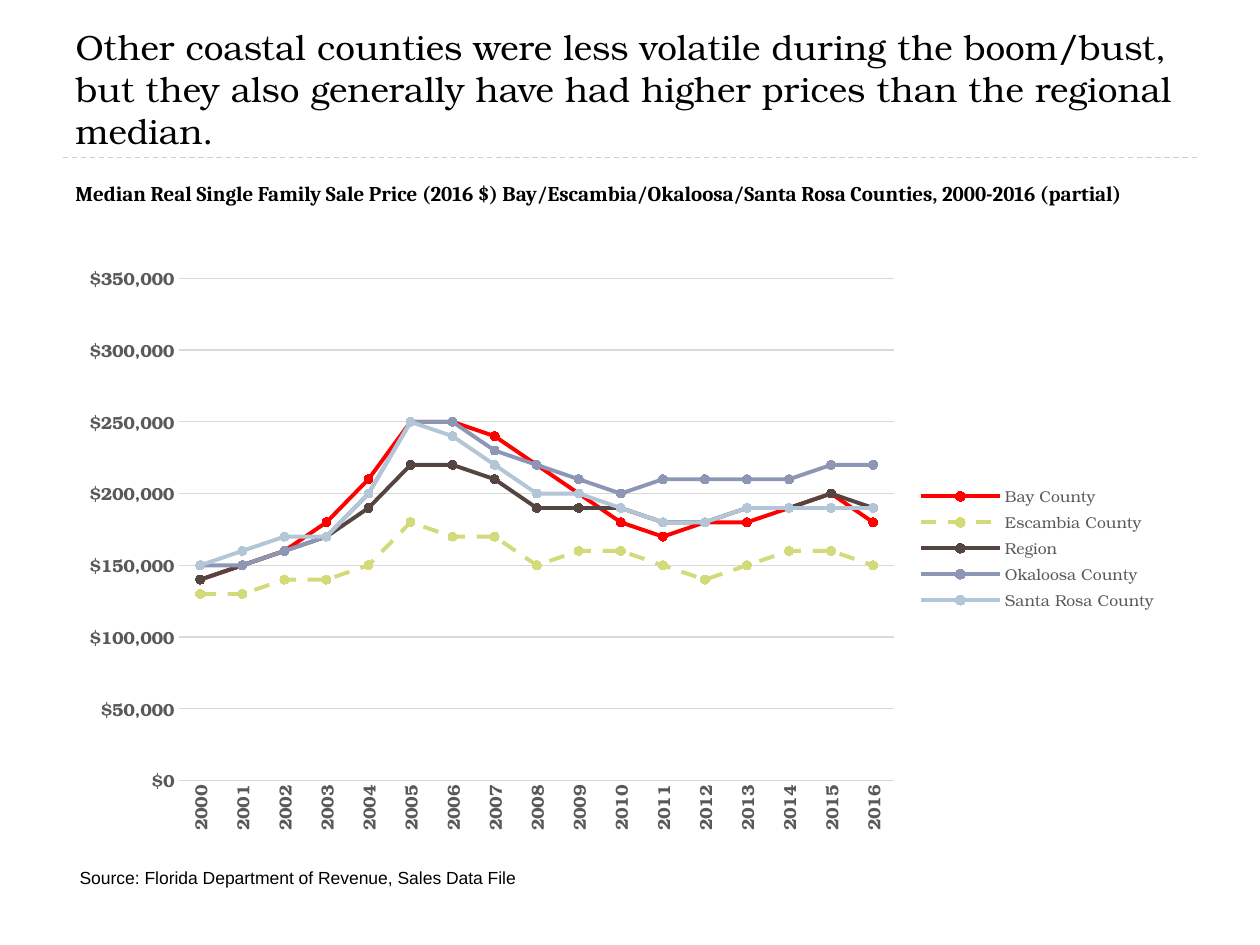
from dataclasses import dataclass

from lxml.etree import SubElement
from pptx import Presentation
from pptx.chart.data import CategoryChartData
from pptx.dml.color import RGBColor
from pptx.enum.chart import (XL_CHART_TYPE, XL_LEGEND_POSITION as LegendPos,
                             XL_MARKER_STYLE as Marker, XL_TICK_MARK as Tick)
from pptx.enum.dml import MSO_LINE as Dash
from pptx.enum.shapes import MSO_CONNECTOR
from pptx.enum.text import MSO_ANCHOR, MSO_AUTO_SIZE, PP_ALIGN
from pptx.oxml import parse_xml
from pptx.oxml.ns import nsdecls, qn
from pptx.util import Pt


@dataclass(frozen=True)
class Theme:
    serif: str = "TeX Gyre Bonum"
    heading: str = "Cambria"
    sans: str = "Arial"
    ink: str = "000000"
    muted: str = "595959"
    paper: str = "FFFFFF"
    rule: str = "9FB8CD"
    grid: str = "D9D9D9"
    title_size: float = 20
    heading_size: float = 12
    body_size: float = 10
    legend_size: float = 9
    hairline: float = 0.75
    series_line: float = 2.25
    marker_size: int = 5


THEME = Theme()
YEARS = [str(year) for year in range(2000, 2017)]
PRICE_UNIT = 10000

# County: (colour, dashed, median prices in units of $10,000)
PRICES = {
    "Bay County": ("FF0000", False, [14, 15, 16, 18, 21, 25, 25, 24, 22,
                                     20, 18, 17, 18, 18, 19, 20, 18]),
    "Escambia County": ("D2DA7A", True, [13, 13, 14, 14, 15, 18, 17, 17, 15,
                                         16, 16, 15, 14, 15, 16, 16, 15]),
    "Region": ("554540", False, [14, 15, 16, 17, 19, 22, 22, 21, 19,
                                 19, 19, 18, 18, 19, 19, 20, 19]),
    "Okaloosa County": ("8E96B5", False, [15, 15, 16, 17, 20, 25, 25, 23, 22,
                                          21, 20, 21, 21, 21, 21, 22, 22]),
    "Santa Rosa County": ("B2C6D7", False, [15, 16, 17, 17, 20, 25, 24, 22, 20,
                                            20, 19, 18, 18, 19, 19, 19, 19]),
}


def style_font(font, name, size, color, bold=False):
    font.name, font.size, font.bold = name, Pt(size), bold
    font.color.rgb = RGBColor.from_string(color)


def style_line(line, color, width):
    line.color.rgb = RGBColor.from_string(color)
    line.width = Pt(width)


def fill_solid(fill, color):
    fill.solid()
    fill.fore_color.rgb = RGBColor.from_string(color)


def add_title(slide, box, text):
    """Fill the title placeholder, with a dashed rule behind its lower edge."""
    left, top, width, height = box
    title = slide.shapes.title
    title.left, title.top, title.width, title.height = map(Pt, box)
    fill_solid(title.fill, THEME.paper)
    frame = title.text_frame
    frame.text = text
    frame.word_wrap = True
    frame.auto_size = MSO_AUTO_SIZE.NONE
    frame.vertical_anchor = MSO_ANCHOR.BOTTOM
    paragraph = frame.paragraphs[0]
    paragraph.alignment = PP_ALIGN.LEFT
    style_font(paragraph.runs[0].font, THEME.serif, THEME.title_size, THEME.ink)

    bottom = Pt(top + height)
    rule = slide.shapes.add_connector(MSO_CONNECTOR.STRAIGHT, Pt(left), bottom,
                                      Pt(left + width), bottom)
    style_line(rule.line, THEME.rule, THEME.hairline)
    rule.line.dash_style = Dash.DASH
    SubElement(rule._element.spPr, qn("a:effectLst"))
    title._element.addprevious(rule._element)


def add_caption(slide, box, text, font_name, size, bold=False):
    frame = slide.shapes.add_textbox(*map(Pt, box)).text_frame
    frame.word_wrap = True
    frame.text = text
    paragraph = frame.paragraphs[0]
    style_font(paragraph.runs[0].font, font_name, size, THEME.ink, bold)
    return paragraph


def place_plot(chart, chart_size, plot_box):
    """Fix the inner plot area; plot_box is in points from the chart's corner."""
    plot_area = chart._chartSpace.chart.plotArea
    for layout in plot_area.findall(qn("c:layout")):
        plot_area.remove(layout)
    sizes = "".join(f'<c:{tag} val="{length / whole:.4f}"/>'
                    for tag, length, whole in zip("xywh", plot_box, chart_size * 2))
    plot_area.insert(0, parse_xml(
        f'<c:layout {nsdecls("c")}><c:manualLayout><c:layoutTarget val="inner"/>'
        f'<c:xMode val="edge"/><c:yMode val="edge"/>{sizes}'
        '</c:manualLayout></c:layout>'))


def style_axes(chart):
    years, prices = chart.category_axis, chart.value_axis
    for axis in (years, prices):
        axis.major_tick_mark = axis.minor_tick_mark = Tick.NONE
        style_font(axis.tick_labels.font, THEME.serif, THEME.body_size, THEME.muted, True)
    style_line(years.format.line, THEME.grid, THEME.hairline)
    turned = years._element.find(qn("c:txPr")).find(qn("a:bodyPr"))
    turned.set("rot", "-5400000")
    turned.set("vert", "horz")
    prices.minimum_scale, prices.maximum_scale = 0, 350000
    prices.major_unit = 50000
    prices.tick_labels.number_format = '"$"#,##0'
    prices.tick_labels.number_format_is_linked = False
    prices.format.line.fill.background()
    style_line(prices.major_gridlines.format.line, THEME.grid, THEME.hairline)


def add_price_chart(slide, box):
    data = CategoryChartData(number_format='"$"#,##0')
    data.categories = YEARS
    for county, (_, _, prices) in PRICES.items():
        data.add_series(county, [price * PRICE_UNIT for price in prices])
    chart = slide.shapes.add_chart(XL_CHART_TYPE.LINE_MARKERS, *map(Pt, box), data).chart
    style_font(chart.font, THEME.serif, THEME.body_size, THEME.ink)
    chart.has_title = False
    chart.has_legend = True
    chart.legend.position = LegendPos.RIGHT
    chart.legend.include_in_layout = False
    style_font(chart.legend.font, THEME.serif, THEME.legend_size, THEME.muted)
    style_axes(chart)
    place_plot(chart, box[2:], (64.2, 13.7, 408.6, 287))

    plot = chart.plots[0]
    plot.vary_by_categories = False
    for series, (color, dashed, _) in zip(plot.series, PRICES.values()):
        series.smooth = False
        style_line(series.format.line, color, THEME.series_line)
        if dashed:
            series.format.line.dash_style = Dash.DASH
        marker = series.marker
        marker.style, marker.size = Marker.CIRCLE, THEME.marker_size
        fill_solid(marker.format.fill, color)
        style_line(marker.format.line, color, THEME.hairline)


def main():
    deck = Presentation()
    deck.slide_width, deck.slide_height = Pt(720), Pt(540)
    slide = deck.slides.add_slide(deck.slide_layouts[5])
    add_title(slide, (36, 12, 648, 78),
              "Other coastal counties were less volatile during the boom/bust, but they "
              "also generally have had higher prices than the regional median.")
    heading = add_caption(slide, (36, 98, 630, 39.6),
                          "Median Real Single Family Sale Price (2016 $) Bay/Escambia/"
                          "Okaloosa/Santa Rosa Counties, 2000-2016 (partial)",
                          THEME.heading, THEME.heading_size, bold=True)
    heading.line_spacing = 1.12
    heading.space_before = heading.space_after = Pt(10)
    add_caption(slide, (38.4, 492, 600, 19.4),
                "Source: Florida Department of Revenue, Sales Data File",
                THEME.sans, THEME.body_size)
    add_price_chart(slide, (38.2, 145.4, 630, 336))
    deck.save("out.pptx")


if __name__ == "__main__":
    main()
